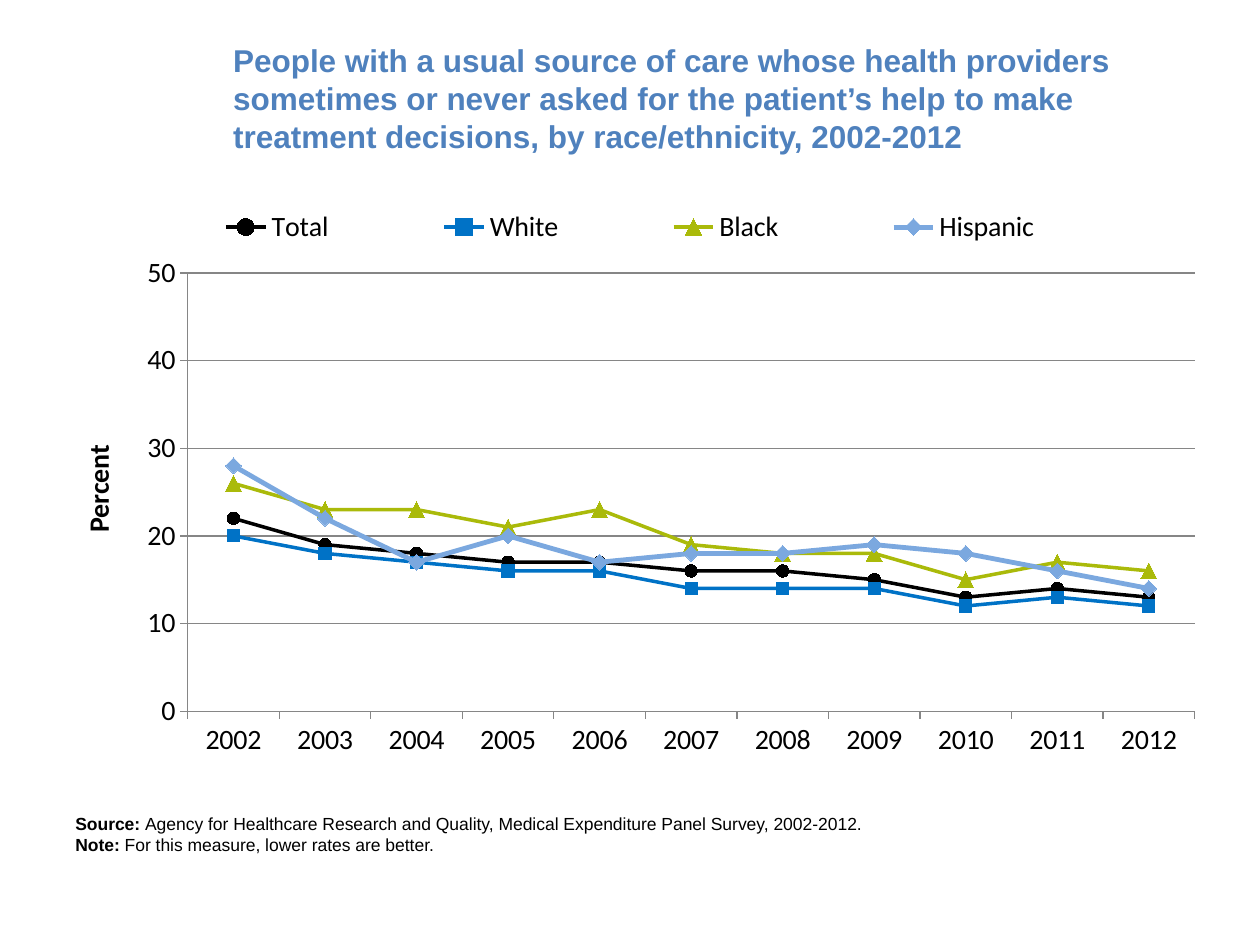
from lxml.etree import SubElement
from pptx import Presentation
from pptx.chart.data import CategoryChartData
from pptx.dml.color import RGBColor
from pptx.enum.chart import XL_CHART_TYPE, XL_LEGEND_POSITION, XL_MARKER_STYLE, XL_TICK_MARK
from pptx.enum.text import MSO_ANCHOR, MSO_AUTO_SIZE, PP_ALIGN
from pptx.oxml.ns import qn
from pptx.util import Inches, Pt

TITLE = ("People with a usual source of care whose health providers sometimes or never "
         "asked for the patient’s help to make treatment decisions, by race/ethnicity, 2002-2012")
FOOTNOTES = [
    ("Source: ", "Agency for Healthcare Research and Quality, Medical Expenditure Panel Survey, 2002-2012."),
    ("Note: ", "For this measure, lower rates are better."),
]
YEARS = [str(year) for year in range(2002, 2013)]
SERIES = [
    ("Total", "000000", 2, XL_MARKER_STYLE.CIRCLE, 7, [22, 19, 18, 17, 17, 16, 16, 15, 13, 14, 13]),
    ("White", "0072C6", 2, XL_MARKER_STYLE.SQUARE, 7, [20, 18, 17, 16, 16, 14, 14, 14, 12, 13, 12]),
    ("Black", "AABA0A", 2, XL_MARKER_STYLE.TRIANGLE, 9, [26, 23, 23, 21, 23, 19, 18, 18, 15, 17, 16]),
    ("Hispanic", "7BA8DF", 2.75, XL_MARKER_STYLE.DIAMOND, 9, [28, 22, 17, 20, 17, 18, 18, 19, 18, 16, 14]),
]
GRID_COLOR = "868686"


def color(value):
    return RGBColor.from_string(value)


def style_font(font, name, size, bold=False, value="000000"):
    font.name = name
    font.size = Pt(size)
    font.bold = bold
    font.color.rgb = color(value)


def style_line(line, value, width):
    line.color.rgb = color(value)
    line.width = Pt(width)


def add_run(paragraph, text, *font_style):
    run = paragraph.add_run()
    run.text = text
    style_font(run.font, *font_style)


def set_layout(element, index, **settings):
    for layout in element.findall(qn("c:layout")):
        element.remove(layout)
    layout = SubElement(element, qn("c:layout"))
    element.insert(index, layout)
    manual = SubElement(layout, qn("c:manualLayout"))
    for tag, value in settings.items():
        SubElement(manual, qn(f"c:{tag}")).set("val", str(value))


def add_title(slide):
    title = slide.shapes.title
    title.left, title.top, title.width, title.height = map(Inches, (1.75, 0.3, 7.75, 0.95))
    frame = title.text_frame
    frame.word_wrap = True
    frame.auto_size = MSO_AUTO_SIZE.NONE
    frame.vertical_anchor = MSO_ANCHOR.MIDDLE
    paragraph = frame.paragraphs[0]
    paragraph.alignment = PP_ALIGN.LEFT
    add_run(paragraph, TITLE, "Arial", 18, True, "4F81BD")


def add_footnotes(slide):
    box = slide.shapes.add_textbox(*map(Inches, (0.5, 6.4, 9, 0.44)))
    frame = box.text_frame
    frame.word_wrap = True
    frame.auto_size = MSO_AUTO_SIZE.SHAPE_TO_FIT_TEXT
    for index, (label, text) in enumerate(FOOTNOTES):
        paragraph = frame.add_paragraph() if index else frame.paragraphs[0]
        add_run(paragraph, label, "Arial", 10, True)
        add_run(paragraph, text, "Arial", 10)


def add_trend_chart(slide):
    data = CategoryChartData(number_format="0")
    data.categories = YEARS
    for name, *_, values in SERIES:
        data.add_series(name, values)
    chart = slide.shapes.add_chart(
        XL_CHART_TYPE.LINE_MARKERS, *map(Inches, (0.5, 1.6, 9, 4.5)), data).chart
    style_font(chart.font, "Arial", 10)
    chart.has_title = False
    chart.plots[0].vary_by_categories = False

    for series, (_, value, width, marker, size, _) in zip(chart.plots[0].series, SERIES):
        series.smooth = False
        style_line(series.format.line, value, width)
        series.marker.style = marker
        series.marker.size = size
        series.marker.format.fill.solid()
        series.marker.format.fill.fore_color.rgb = color(value)
        style_line(series.marker.format.line, value, 0.75)

    for axis in (chart.category_axis, chart.value_axis):
        style_font(axis.tick_labels.font, "Calibri", 16)
        axis.major_tick_mark = XL_TICK_MARK.OUTSIDE
        axis.minor_tick_mark = XL_TICK_MARK.NONE
        style_line(axis.format.line, GRID_COLOR, 0.75)

    percent_axis = chart.value_axis
    percent_axis.minimum_scale = 0
    percent_axis.maximum_scale = 50
    percent_axis.major_unit = 10
    percent_axis.has_major_gridlines = True
    style_line(percent_axis.major_gridlines.format.line, GRID_COLOR, 0.75)
    percent_axis.tick_labels.number_format = "0"
    percent_axis.tick_labels.number_format_is_linked = False
    axis_title = percent_axis.axis_title
    add_run(axis_title.text_frame.paragraphs[0], "Percent", "Calibri", 16, True)

    chart.has_legend = True
    chart.legend.position = XL_LEGEND_POSITION.TOP
    chart.legend.include_in_layout = False
    style_font(chart.legend.font, "Calibri", 16)

    plot_area = chart._chartSpace.find(".//" + qn("c:plotArea"))
    legend = chart._chartSpace.find(".//" + qn("c:legend"))
    set_layout(plot_area, 0, layoutTarget="inner", xMode="edge", yMode="edge",
               x=0.11, y=0.126, w=0.888, h=0.773)
    set_layout(legend, 1, xMode="edge", yMode="edge", x=0.05, y=0, w=0.9, h=0.09)
    set_layout(axis_title._element, 1, xMode="edge", yMode="edge", x=0.01, y=0.42)


def main():
    presentation = Presentation()
    presentation.slide_width = Inches(10)
    presentation.slide_height = Inches(7.5)
    slide = presentation.slides.add_slide(presentation.slide_layouts[5])
    add_title(slide)
    add_footnotes(slide)
    add_trend_chart(slide)
    presentation.save("out.pptx")


if __name__ == "__main__":
    main()
